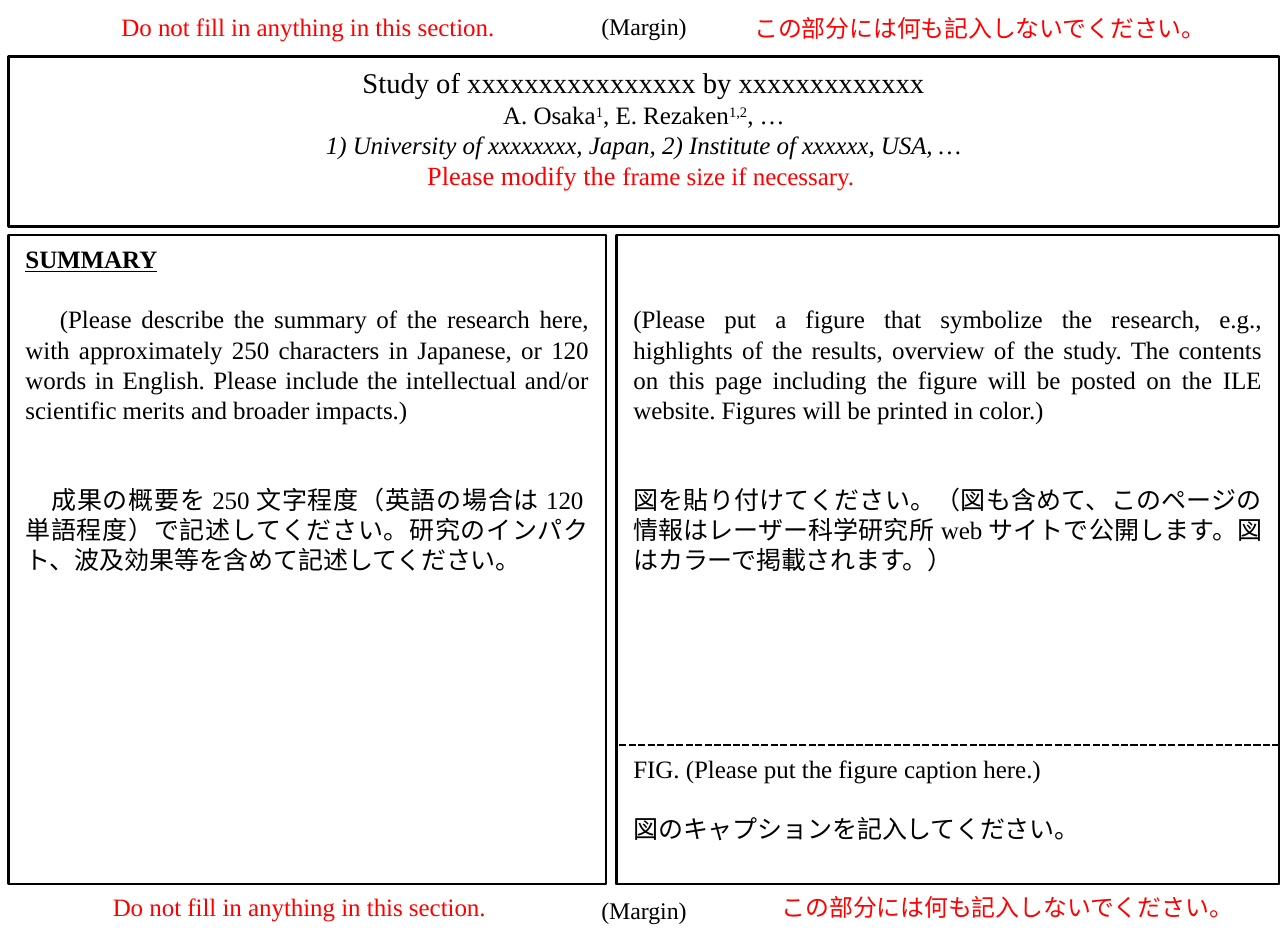
"""Build the one-page research report form with its title, summary and figure frames."""
from lxml.etree import SubElement
from pptx import Presentation
from pptx.dml.color import RGBColor
from pptx.enum.dml import MSO_LINE
from pptx.enum.shapes import MSO_SHAPE
from pptx.enum.text import MSO_ANCHOR, PP_ALIGN
from pptx.oxml.ns import qn
from pptx.util import Inches, Pt

LATIN, JAPANESE = "Times New Roman", "Noto Sans CJK JP"
BLACK, RED = "000000", "FF0000"
BODY_SIZE, LEADING = 10.5, 1.2
LINE_HEIGHT = BODY_SIZE * LEADING
PAD_X, PAD_Y = 0.1, 0.05

PAGE_WIDTH, PAGE_HEIGHT = 7.5, 65 / 12
LEFT, RIGHT = 0.05, 7.45
COLUMN_TOP, COLUMN_HEIGHT = 1.37, 3.78
FIGURE_LEFT = 3.59
FIGURE_WIDTH = RIGHT - FIGURE_LEFT
NOTE_WIDTH = 3.03

EMPHASIS = {"bold": True, "underline": True}
SUPER = {"base": 30}

SUMMARY = [
    {"runs": [("SUMMARY", EMPHASIS)]},
    {"runs": [("(Please describe the summary of the research here, with approximately 250 "
               "characters in Japanese, or 120 words in English. Please include the "
               "intellectual and/or scientific merits and broader impacts.)", {})],
     "gap": 1, "indent": 0.2},
    {"runs": [("成果の概要を250文字程度（英語の場合は120単語程度）で記述してください。"
               "研究のインパクト、波及効果等を含めて記述してください。", {})],
     "gap": 2, "indent": 0.15},
]
HEADING = [
    {"runs": [("Study of xxxxxxxxxxxxxxxx by xxxxxxxxxxxxx", {"size": 12})]},
    {"runs": [("A. Osaka", {}), ("1", SUPER), (", E. Rezaken", {}), ("1,2", SUPER),
              (", …", {})]},
    {"runs": [("1) University of xxxxxxxx, Japan, 2) Institute of xxxxxx, USA, …",
               {"italic": True})]},
    {"runs": [("Please modify the ", {"size": 11, "color": RED}),
              ("frame size if necessary. ", {"color": RED})]},
]
CAPTION = [
    {"runs": [("FIG. (Please put the figure caption here.)", {})]},
    {"runs": [("図のキャプションを記入してください。", {})], "gap": 1},
]
FIGURE = [
    {"runs": [("(Please put a figure that symbolize the research, e.g., highlights of the "
               "results, overview of the study. The contents on this page including the "
               "figure will be posted on the ILE website. Figures will be printed in "
               "color.)", {})]},
    {"runs": [("図を貼り付けてください。（図も含めて、このページの情報はレーザー科学研究所"
               "webサイトで公開します。図はカラーで掲載されます。）", {})], "gap": 2},
]
MARGIN = [{"runs": [("(Margin)", {"size": 10})]}]
NOTE_ENGLISH = [{"runs": [("Do not fill in anything in this section.", {"color": RED})]}]
NOTE_JAPANESE = [{"runs": [("この部分には何も記入しないでください。",
                            {"size": 10, "color": RED, "font": JAPANESE})]}]

FRAMES = [
    ((LEFT, COLUMN_TOP, 3.48, COLUMN_HEIGHT), SUMMARY, PP_ALIGN.JUSTIFY, MSO_LINE.SOLID),
    ((LEFT, 0.33, RIGHT - LEFT, 0.99), HEADING, PP_ALIGN.CENTER, MSO_LINE.SOLID),
    ((FIGURE_LEFT, COLUMN_TOP, FIGURE_WIDTH, COLUMN_HEIGHT), [], PP_ALIGN.JUSTIFY,
     MSO_LINE.SOLID),
    ((FIGURE_LEFT, 4.34, FIGURE_WIDTH, 0.81), CAPTION, PP_ALIGN.JUSTIFY,
     MSO_LINE.SQUARE_DOT),
]
LABELS = [
    ((FIGURE_LEFT, COLUMN_TOP, FIGURE_WIDTH, 2.04), FIGURE, PP_ALIGN.JUSTIFY,
     MSO_ANCHOR.TOP, 2),
    ((0, 0, PAGE_WIDTH, 0.3), MARGIN, PP_ALIGN.CENTER, MSO_ANCHOR.MIDDLE, 0),
    ((0, 5.18, PAGE_WIDTH, 0.24), MARGIN, PP_ALIGN.CENTER, MSO_ANCHOR.MIDDLE, 0),
    ((0.28, 0.02, NOTE_WIDTH, 0.29), NOTE_ENGLISH, PP_ALIGN.CENTER, MSO_ANCHOR.TOP, 0),
    ((4.19, 0.03, NOTE_WIDTH, 0.27), NOTE_JAPANESE, PP_ALIGN.CENTER, MSO_ANCHOR.TOP, 0),
    ((0.23, 5.14, NOTE_WIDTH, 0.29), NOTE_ENGLISH, PP_ALIGN.CENTER, MSO_ANCHOR.TOP, 0),
    ((4.35, 5.15, NOTE_WIDTH, 0.27), NOTE_JAPANESE, PP_ALIGN.CENTER, MSO_ANCHOR.TOP, 0),
]


def paint(color_format, hex_color):
    color_format.rgb = RGBColor.from_string(hex_color)


def add_run(paragraph, words, style):
    run = paragraph.add_run()
    run.text = words
    font = run.font
    font.size = Pt(style.get("size", BODY_SIZE))
    font.bold = style.get("bold", False)
    font.italic = style.get("italic", False)
    font.underline = style.get("underline", False)
    font.fill.solid()
    paint(font.fill.fore_color, style.get("color", BLACK))
    font.name = style.get("font", LATIN)
    properties = run._r.get_or_add_rPr()
    SubElement(properties, qn("a:ea")).set("typeface", JAPANESE)
    if "base" in style:
        properties.set("baseline", str(style["base"] * 1000))


def write(frame, paragraphs, align, anchor, blank_lines=0):
    frame.word_wrap = True
    frame.vertical_anchor = anchor
    frame.margin_left = frame.margin_right = Inches(PAD_X)
    frame.margin_top = Inches(PAD_Y + blank_lines * LINE_HEIGHT / 72)
    frame.margin_bottom = Inches(PAD_Y)
    for index, content in enumerate(paragraphs):
        paragraph = frame.add_paragraph() if index else frame.paragraphs[0]
        paragraph.alignment = align
        largest = max(style.get("size", BODY_SIZE) for _, style in content["runs"])
        paragraph.line_spacing = Pt(largest * LEADING)
        paragraph.space_before = Pt(content.get("gap", 0) * LINE_HEIGHT)
        if "indent" in content:
            paragraph._p.get_or_add_pPr().set("indent", str(Inches(content["indent"])))
        for words, style in content["runs"]:
            add_run(paragraph, words, style)


def main():
    deck = Presentation()
    deck.slide_width = Inches(PAGE_WIDTH)
    deck.slide_height = Inches(PAGE_HEIGHT)
    deck.element.find(qn("p:sldSz")).attrib.pop("type", None)
    shapes = deck.slides.add_slide(deck.slide_layouts[6]).shapes
    for place, paragraphs, align, dash in FRAMES:
        box = shapes.add_shape(MSO_SHAPE.RECTANGLE, *map(Inches, place))
        box.shadow.inherit = False
        box.fill.background()
        paint(box.line.color, BLACK)
        box.line.width = Pt(1)
        box.line.dash_style = dash
        write(box.text_frame, paragraphs, align, MSO_ANCHOR.TOP)
    for place, paragraphs, align, anchor, blank_lines in LABELS:
        label = shapes.add_textbox(*map(Inches, place))
        write(label.text_frame, paragraphs, align, anchor, blank_lines)
    deck.save("out.pptx")


if __name__ == "__main__":
    main()
